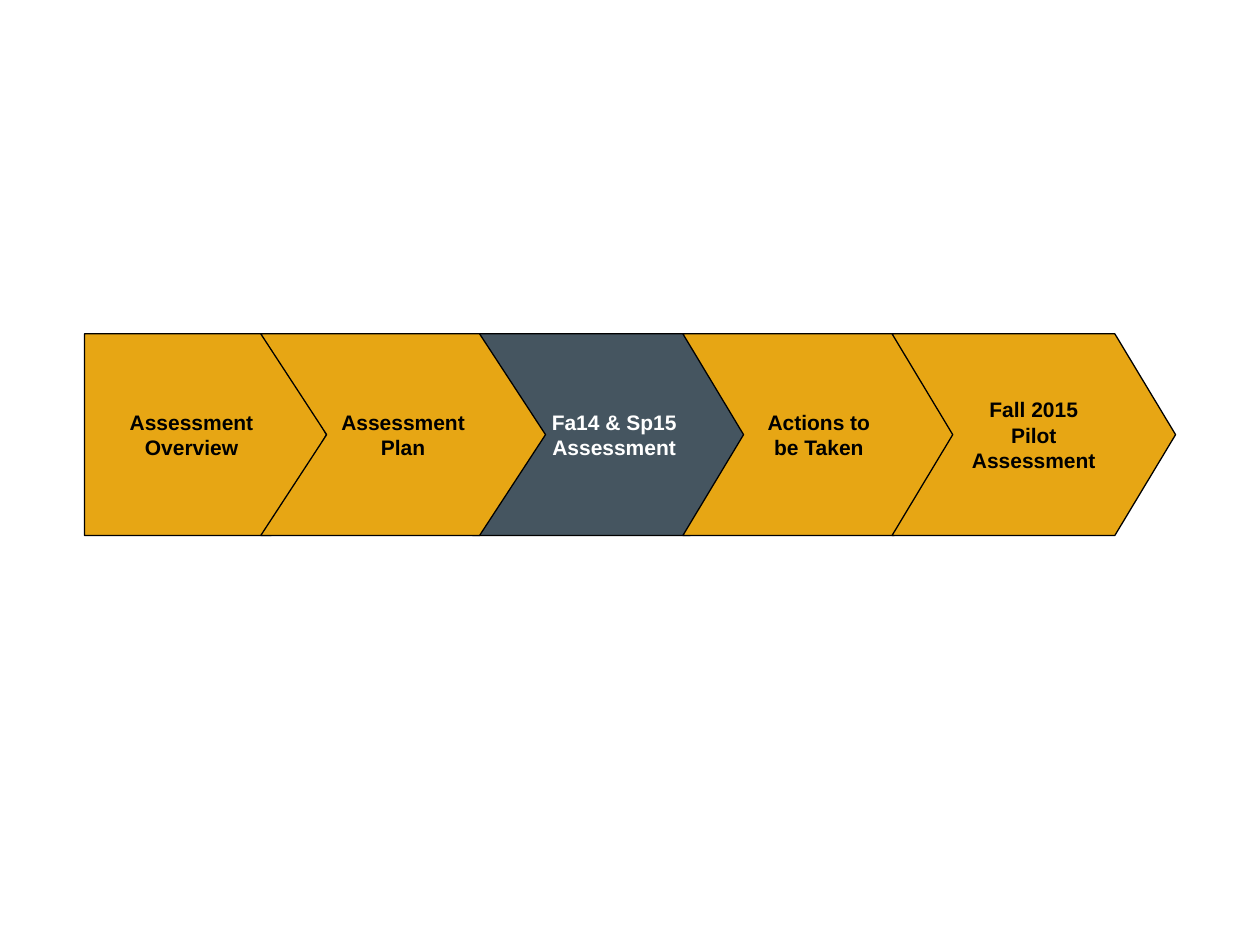
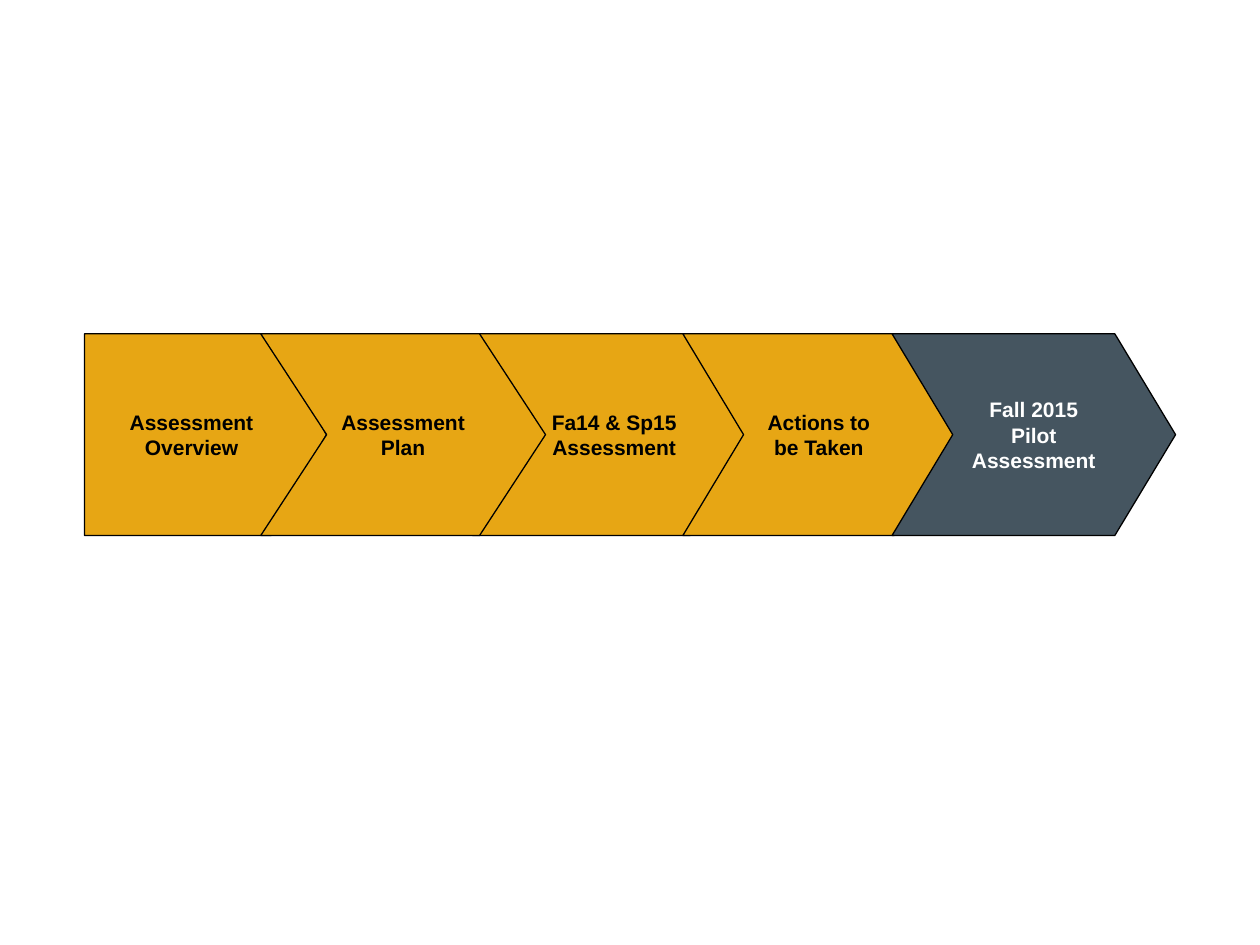
from dataclasses import dataclass

from pptx import Presentation
from pptx.dml.color import RGBColor
from pptx.enum import shapes, text
from pptx.slide import Slide
from pptx.util import Pt

# Shared style
GOLD, SLATE, BLACK, WHITE = "E7A614", "455560", "000000", "FFFFFF"
FONT_NAME, FONT_SIZE = "Arial", 12
BAND_TOP, BAND_HEIGHT = 190.8, 115.2
BLANK_LAYOUT = 6


@dataclass(frozen=True)
class Step:
    label: str
    left: float
    width: float
    point: float  # depth of the arrow point, relative to the height
    kind: shapes.MSO_SHAPE = shapes.MSO_SHAPE.CHEVRON


OVERVIEW = Step("Assessment\nOverview", 48.24, 138.24, 0.274, shapes.MSO_SHAPE.PENTAGON)
PLAN = Step("Assessment Plan", 149.04, 162.72, 0.327)
RESULTS = Step("Fa14 & Sp15\nAssessment", 270, 162, 0.327)
ACTIONS = Step("Actions to be Taken", 390.24, 155.52, 0.301)
PILOT = Step("Fall 2015 Pilot Assessment", 509.76, 162, 0.301)

# Back to front: the plan overlaps both of its neighbours
STEPS = (OVERVIEW, RESULTS, ACTIONS, PILOT, PLAN)


def color(value: str) -> RGBColor:
    return RGBColor.from_string(value)


def draw_step(slide: Slide, step: Step, active: bool) -> None:
    shape = slide.shapes.add_shape(
        step.kind, Pt(step.left), Pt(BAND_TOP), Pt(step.width), Pt(BAND_HEIGHT))
    shape.adjustments[0] = step.point
    shape.shadow.inherit = False
    shape.fill.solid()
    shape.fill.fore_color.rgb = color(SLATE if active else GOLD)
    shape.line.color.rgb = color(BLACK)
    shape.line.width = Pt(0.75)

    # Label
    frame = shape.text_frame
    frame.word_wrap = True
    frame.vertical_anchor = text.MSO_ANCHOR.MIDDLE
    frame.text = step.label
    for paragraph in frame.paragraphs:
        paragraph.alignment = text.PP_ALIGN.CENTER
        font = paragraph.font
        font.name, font.size, font.bold = FONT_NAME, Pt(FONT_SIZE), True
        font.color.rgb = color(WHITE if active else BLACK)


def add_progress_slide(presentation: Presentation, current: Step) -> None:
    slide = presentation.slides.add_slide(presentation.slide_layouts[BLANK_LAYOUT])
    for step in STEPS:
        draw_step(slide, step, active=step == current)


def main() -> None:
    presentation = Presentation()
    presentation.slide_width, presentation.slide_height = Pt(720), Pt(540)
    for current in (RESULTS, PILOT):
        add_progress_slide(presentation, current)
    presentation.save("out.pptx")


if __name__ == "__main__":
    main()
